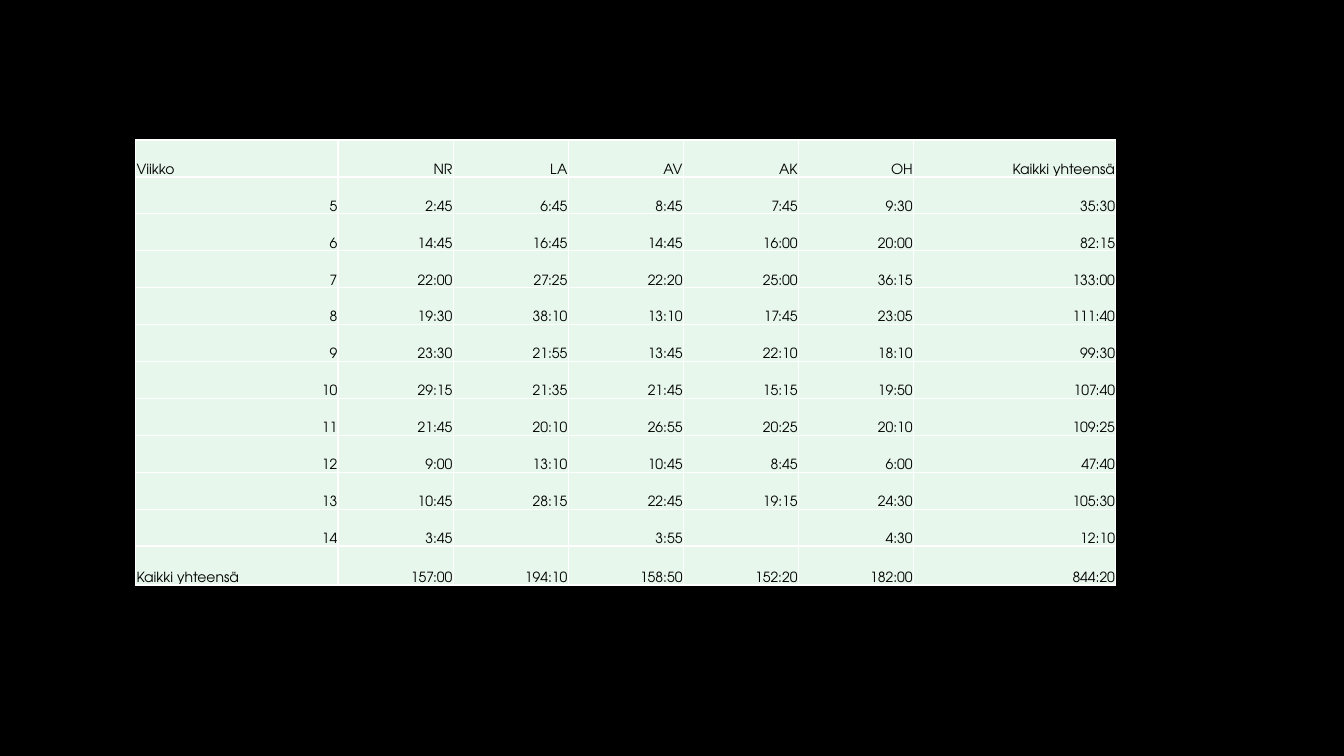
from lxml.etree import SubElement
from pptx import Presentation
from pptx.dml.color import RGBColor
from pptx.enum.text import MSO_ANCHOR as Anchor, PP_ALIGN as Align
from pptx.oxml.ns import qn
from pptx.util import Cm, Pt

COLORS = {"background": "000000", "cell": "E7F7EC", "border": "FFFFFF", "text": "000000"}
FONT = "TeX Gyre Adventor"

TOTAL = "Kaikki yhteensä"
HOURS = [
    ["Viikko", "NR", "LA", "AV", "AK", "OH", TOTAL],
    ["5", "2:45", "6:45", "8:45", "7:45", "9:30", "35:30"],
    ["6", "14:45", "16:45", "14:45", "16:00", "20:00", "82:15"],
    ["7", "22:00", "27:25", "22:20", "25:00", "36:15", "133:00"],
    ["8", "19:30", "38:10", "13:10", "17:45", "23:05", "111:40"],
    ["9", "23:30", "21:55", "13:45", "22:10", "18:10", "99:30"],
    ["10", "29:15", "21:35", "21:45", "15:15", "19:50", "107:40"],
    ["11", "21:45", "20:10", "26:55", "20:25", "20:10", "109:25"],
    ["12", "9:00", "13:10", "10:45", "8:45", "6:00", "47:40"],
    ["13", "10:45", "28:15", "22:45", "19:15", "24:30", "105:30"],
    ["14", "3:45", "", "3:55", "", "4:30", "12:10"],
    [TOTAL, "157:00", "194:10", "158:50", "152:20", "182:00", "844:20"],
]
COLUMN_WIDTHS = [5.1] + [2.9] * 5 + [5.1]
ROW_HEIGHTS = [0.93] * (len(HOURS) - 1) + [0.98]


def write_text(cell, text, size=10, color="text", align=Align.RIGHT):
    paragraph = cell.text_frame.paragraphs[0]
    paragraph.alignment = align
    run = paragraph.add_run()
    run.text = text
    run.font.name = FONT
    run.font.size = Pt(size)
    run.font.color.rgb = RGBColor.from_string(COLORS[color])


def add_borders(cell, color="border", width=1):
    properties = cell._tc.get_or_add_tcPr()
    for index, side in enumerate(("a:lnL", "a:lnR", "a:lnT", "a:lnB")):
        line = SubElement(properties, qn(side), w=str(Pt(width)))
        fill = SubElement(line, qn("a:solidFill"))
        SubElement(fill, qn("a:srgbClr"), val=COLORS[color])
        properties.insert(index, line)


# Slide
presentation = Presentation()
presentation.slide_width = Cm(33.87)
presentation.slide_height = Cm(19.05)
slide = presentation.slides.add_slide(presentation.slide_layouts[6])
background = slide.background.fill
background.solid()
background.fore_color.rgb = RGBColor.from_string(COLORS["background"])

# Table frame
frame = slide.shapes.add_table(
    len(HOURS), len(COLUMN_WIDTHS), Cm(3.42), Cm(3.53),
    Cm(sum(COLUMN_WIDTHS)), Cm(sum(ROW_HEIGHTS)))
table = frame.table
table.first_row = False
table.horz_banding = False
for column, width in zip(table.columns, COLUMN_WIDTHS):
    column.width = Cm(width)
for row, height in zip(table.rows, ROW_HEIGHTS):
    row.height = Cm(height)

# Weekly hours
for row_index, values in enumerate(HOURS):
    for column_index, value in enumerate(values):
        cell = table.cell(row_index, column_index)
        cell.fill.solid()
        cell.fill.fore_color.rgb = RGBColor.from_string(COLORS["cell"])
        cell.vertical_anchor = Anchor.BOTTOM
        cell.margin_left = cell.margin_right = cell.margin_top = Cm(0.02)
        cell.margin_bottom = Cm(0)
        add_borders(cell)
        is_label = column_index == 0 and not value.isdigit()
        if value:
            write_text(cell, value, align=Align.LEFT if is_label else Align.RIGHT)

presentation.save("out.pptx")
